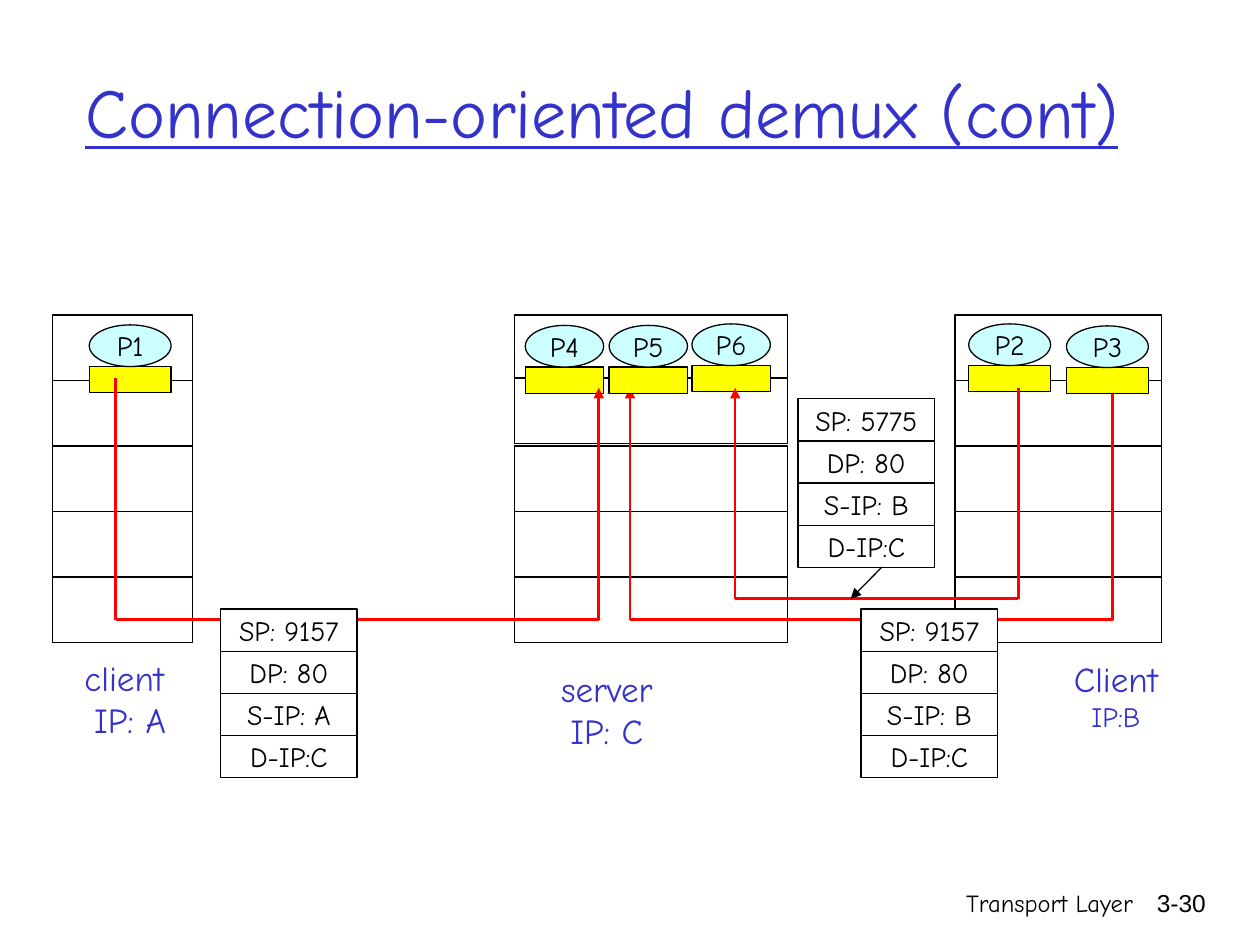
from itertools import pairwise

from lxml.etree import SubElement
from pptx import Presentation
from pptx.dml.color import RGBColor
from pptx.enum.shapes import MSO_CONNECTOR, MSO_SHAPE
from pptx.enum.text import MSO_ANCHOR, PP_ALIGN
from pptx.oxml.ns import qn
from pptx.util import Cm, Pt

COLORS = {
    "white": "FFFFFF",
    "black": "000000",
    "heading": "3333CC",
    "process": "CCFFFF",
    "socket": "FFFF00",
    "route": "FF0000",
}
FONT = "Comic Neue"
HOST_TOP, LAYER_HEIGHT, LAYER_COUNT = 6.35, 1.32, 5
PROCESS_HEIGHT, SOCKET_HEIGHT = 0.84, 0.53
FIELD_WIDTH, FIELD_HEIGHT = 2.75, 0.85


def color(name):
    """Return the named palette colour."""
    return RGBColor.from_string(COLORS[name])


def write_lines(text_frame, lines, color_name, align, font_name=FONT):
    """Fill a text frame with one paragraph per (text, size) pair."""
    for index, (text, size) in enumerate(lines):
        paragraph = text_frame.paragraphs[0] if index == 0 else text_frame.add_paragraph()
        paragraph.text = text
        paragraph.alignment = align
        paragraph.font.name = font_name
        paragraph.font.size = Pt(size)
        paragraph.font.color.rgb = color(color_name)


def add_text(slide, box, lines, color_name="black", align=PP_ALIGN.CENTER, font_name=FONT, wrap=True):
    """Add a text box and return its text frame."""
    text_frame = slide.shapes.add_textbox(*map(Cm, box)).text_frame
    text_frame.word_wrap = wrap
    write_lines(text_frame, lines, color_name, align, font_name)
    return text_frame


def add_box(slide, kind, box, fill, text=""):
    """Add an outlined shape with optional centred text."""
    shape = slide.shapes.add_shape(kind, *map(Cm, box))
    shape.shadow.inherit = False
    shape.fill.solid()
    shape.fill.fore_color.rgb = color(fill)
    shape.line.color.rgb = color("black")
    shape.line.width = Pt(0.75)
    if text:
        shape.text_frame.word_wrap = False
        shape.text_frame.vertical_anchor = MSO_ANCHOR.MIDDLE
        write_lines(shape.text_frame, [(text, 16)], "black", PP_ALIGN.CENTER)


def add_host(slide, left, width, raised_layer=None):
    """Add a stack of protocol layers, one of them optionally raised."""
    for layer in range(LAYER_COUNT):
        top = HOST_TOP + layer * LAYER_HEIGHT - (0.05 if layer == raised_layer else 0)
        add_box(slide, MSO_SHAPE.RECTANGLE, (left, top, width, LAYER_HEIGHT), "white")


def add_process(slide, name, left, top, width):
    """Add a process ellipse standing on its socket."""
    socket = (left, top + PROCESS_HEIGHT, width, SOCKET_HEIGHT)
    add_box(slide, MSO_SHAPE.RECTANGLE, socket, "socket")
    add_box(slide, MSO_SHAPE.OVAL, (left, top, width, PROCESS_HEIGHT), "process", name)


def add_packet(slide, left, top, fields):
    """Add a packet as a column of header fields."""
    for row, field in enumerate(fields):
        box = (left, top + row * FIELD_HEIGHT, FIELD_WIDTH, FIELD_HEIGHT)
        add_box(slide, MSO_SHAPE.RECTANGLE, box, "white", field)


def add_route(slide, points, color_name="route", width=1.5):
    """Join points with straight lines, ending in an arrowhead."""
    for start, end in pairwise(points):
        connector = slide.shapes.add_connector(MSO_CONNECTOR.STRAIGHT, *map(Cm, start + end))
        connector.line.color.rgb = color(color_name)
        connector.line.width = Pt(width)
        SubElement(connector.element.spPr, qn("a:effectLst"))
    SubElement(connector.line._get_or_add_ln(), qn("a:tailEnd"), type="triangle")


def add_loop(slide, start_x, start_y, turn_y, end_x):
    """Route a connection down, across and up to a server socket."""
    add_route(slide, [(start_x, start_y), (start_x, turn_y), (end_x, turn_y), (end_x, 7.82)])


def main():
    """Build the slide and save it."""
    presentation = Presentation()
    presentation.slide_width, presentation.slide_height = Cm(25.4), Cm(19.05)
    slide = presentation.slides.add_slide(presentation.slide_layouts[6])

    title = add_text(slide, (1.47, 0.64, 21.6, 3.18), [("Connection-oriented demux (cont)", 40)],
                     "heading", PP_ALIGN.LEFT)
    title.vertical_anchor = MSO_ANCHOR.MIDDLE
    title.paragraphs[0].font.underline = True
    add_text(slide, (15.04, 17.78, 8.05, 1.27), [("Transport Layer", 14)], align=PP_ALIGN.RIGHT)
    add_text(slide, (22.68, 17.78, 1.88, 1.27), [("3-30", 14)], align=PP_ALIGN.RIGHT, font_name="Arial")

    add_host(slide, 1.06, 2.82)
    add_host(slide, 10.37, 5.51, raised_layer=1)
    add_host(slide, 19.25, 4.17)
    for box, lines in [
        ((1.3, 13.11, 2.41, 1.96), [("client", 20), (" IP: A", 20)]),
        ((10.9, 13.34, 2.67, 1.96), [("server", 20), ("IP: C", 20)]),
        ((21.29, 13.13, 2.41, 1.78), [("Client", 20), ("IP:B", 16)]),
    ]:
        add_text(slide, box, lines, "heading", wrap=False)

    add_process(slide, "P1", 1.8, 6.55, 1.65)
    add_process(slide, "P2", 19.53, 6.53, 1.65)
    add_process(slide, "P4", 10.59, 6.56, 1.58)
    add_process(slide, "P6", 13.95, 6.53, 1.58)
    add_loop(slide, 2.33, 7.62, 12.49, 12.07)
    add_loop(slide, 22.43, 7.62, 12.49, 12.7)
    add_loop(slide, 20.53, 7.82, 12.07, 14.82)
    add_process(slide, "P5", 12.28, 6.56, 1.58)
    add_process(slide, "P3", 21.5, 6.57, 1.65)

    add_packet(slide, 4.45, 12.28, ["SP: 9157", "DP: 80", "S-IP: A", "D-IP:C"])
    add_packet(slide, 17.36, 12.28, ["SP: 9157", "DP: 80", "S-IP: B", "D-IP:C"])
    add_packet(slide, 16.09, 8.04, ["SP: 5775", "DP: 80", "S-IP: B", "D-IP:C"])
    add_route(slide, [(17.78, 11.43), (17.15, 12.07)], "black", 0.75)

    presentation.save("out.pptx")


if __name__ == "__main__":
    main()
